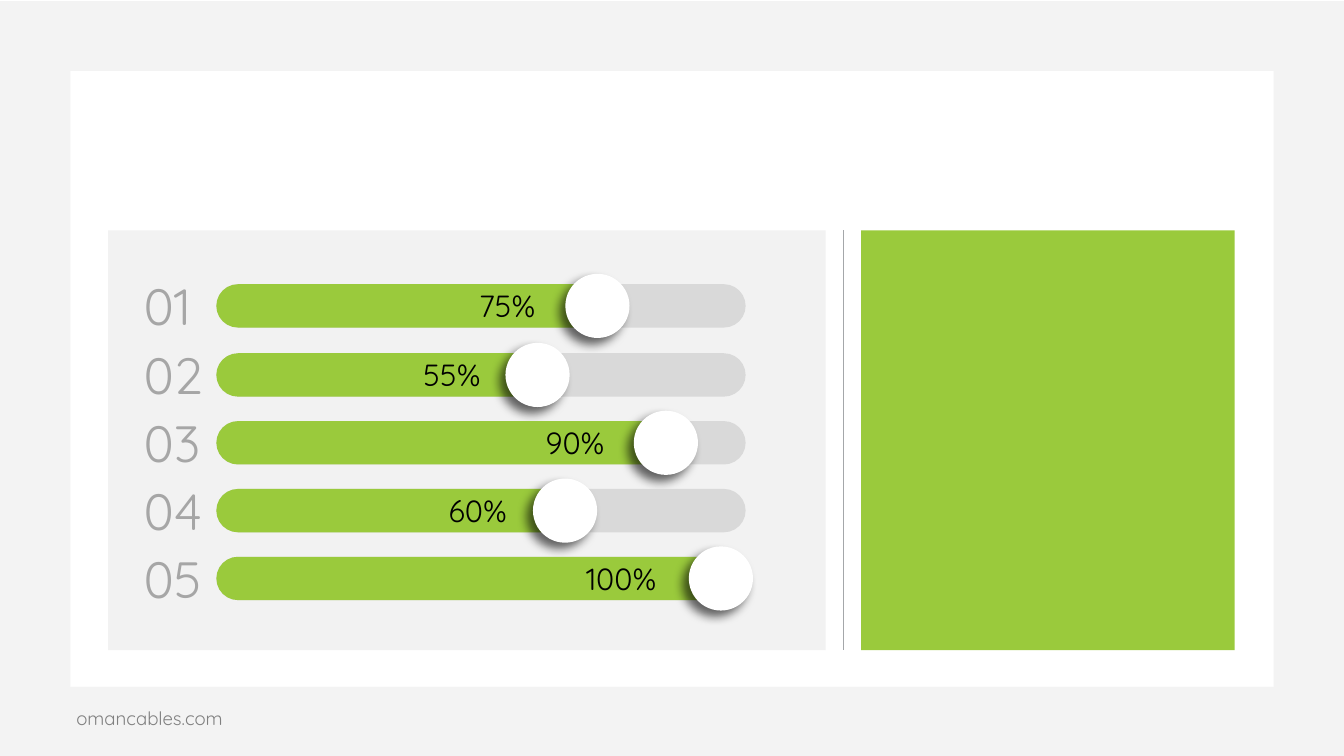
from lxml.etree import SubElement
from pptx import Presentation
from pptx.dml.color import RGBColor
from pptx.enum.shapes import MSO_CONNECTOR, MSO_SHAPE
from pptx.enum.text import MSO_AUTO_SIZE
from pptx.oxml.ns import qn
from pptx.util import Pt

WHITE = RGBColor(0xFF, 0xFF, 0xFF)
BLACK = RGBColor(0x00, 0x00, 0x00)
GREEN = RGBColor(0x9A, 0xCA, 0x3C)
PANEL_GRAY = RGBColor(0xF2, 0xF2, 0xF2)
FRAME_GRAY = RGBColor(0xEF, 0xEF, 0xEF)
TRACK_GRAY = RGBColor(0xD9, 0xD9, 0xD9)
NUMBER_GRAY = RGBColor(0xA6, 0xA6, 0xA6)
FOOTER_GRAY = RGBColor(0x80, 0x80, 0x80)
RULE_GRAY = RGBColor(0xA4, 0xA7, 0xAA)

PAGE_WIDTH, PAGE_HEIGHT = 1583.28, 890.64
PANEL_TOP, PANEL_HEIGHT = 271.44, 494.64
BAR_LEFT, TRACK_WIDTH, BAR_HEIGHT = 254.88, 623.52, 51.12
KNOB_SIZE = 75.6

# Bar top, percentage, filled width, knob left, percentage left and width
SLIDERS = [
    (334.8, 75, 458.64, 666, 557.28, 102.24),
    (416.16, 55, 393.12, 595.44, 491.76, 97.92),
    (496.08, 90, 548.64, 746.64, 635.76, 101.52),
    (576, 60, 429.12, 627.84, 521.28, 101.52),
    (655.92, 100, 596.88, 811.44, 683.28, 126.72),
]


class SlideBuilder:
    font_name = "Quicksand"

    def __init__(self, page):
        self.page = page
        self.shapes = page.shapes

    def start_group(self):
        """Send the elements that follow into a new group."""
        self.shapes = self.page.shapes.add_group_shape().shapes

    def end_group(self):
        self.shapes = self.page.shapes

    def paint(self, shape, color):
        shape.shadow.inherit = False
        shape.fill.solid()
        shape.fill.fore_color.rgb = color
        shape.line.fill.background()
        return shape

    def shape(self, kind, left, top, width, height, color):
        shape = self.shapes.add_shape(kind, Pt(left), Pt(top), Pt(width), Pt(height))
        return self.paint(shape, color)

    def bar(self, top, width, color):
        bar = self.shape(MSO_SHAPE.ROUNDED_RECTANGLE, BAR_LEFT, top, width, BAR_HEIGHT, color)
        bar.adjustments[0] = 0.5

    def knob(self, left, top):
        knob = self.shape(MSO_SHAPE.OVAL, left, top, KNOB_SIZE, KNOB_SIZE, WHITE)
        effects = knob.element.spPr.find(qn("a:effectLst"))
        shadow = SubElement(effects, qn("a:outerShdw"), blurRad=str(Pt(12)),
                            dist=str(Pt(10)), dir="8100000", algn="ctr", rotWithShape="0")
        color = SubElement(shadow, qn("a:srgbClr"), val=str(BLACK))
        SubElement(color, qn("a:alpha"), val="60000")

    def vertical_rule(self, left, top, height):
        rule = self.shapes.add_connector(
            MSO_CONNECTOR.STRAIGHT, Pt(left), Pt(top), Pt(left), Pt(top + height))
        rule.line.color.rgb = RULE_GRAY
        rule.line.width = Pt(1.1)
        SubElement(rule.element.spPr, qn("a:effectLst"))

    def frame(self, outer, inner):
        """Draw a translucent border between two (left, top, right, bottom) boxes."""
        def corners(left, top, right, bottom):
            points = [(left, top), (right, top), (right, bottom), (left, bottom)]
            return [(Pt(x), Pt(y)) for x, y in points]

        outer_points, inner_points = corners(*outer), corners(*inner)
        builder = self.shapes.build_freeform(*outer_points[0])
        builder.add_line_segments(outer_points[1:], close=True)
        builder.move_to(*inner_points[0])
        builder.add_line_segments(inner_points[:0:-1], close=True)
        frame = self.paint(builder.convert_to_shape(), FRAME_GRAY)
        color = frame.element.spPr.find(qn("a:solidFill")).find(qn("a:srgbClr"))
        SubElement(color, qn("a:alpha"), val="75000")

    def text(self, text, left, top, width, height, size, color):
        box = self.shapes.add_textbox(Pt(left), Pt(top), Pt(width), Pt(height))
        text_frame = box.text_frame
        text_frame.word_wrap = True
        text_frame.auto_size = MSO_AUTO_SIZE.SHAPE_TO_FIT_TEXT
        text_frame.text = text
        span = text_frame.paragraphs[0].runs[0]
        span.font.name = self.font_name
        span.font.size = Pt(size)
        span.font.color.rgb = color
        return text_frame


def main():
    deck = Presentation()
    deck.slide_width, deck.slide_height = Pt(PAGE_WIDTH), Pt(PAGE_HEIGHT)
    blank_layout = deck.slide_layouts[6]
    builder = SlideBuilder(deck.slides.add_slide(blank_layout))

    builder.shape(MSO_SHAPE.RECTANGLE, 127.44, PANEL_TOP, 845.28, PANEL_HEIGHT, PANEL_GRAY)
    builder.shape(MSO_SHAPE.RECTANGLE, 1014.48, PANEL_TOP, 439.92, PANEL_HEIGHT, GREEN)
    builder.vertical_rule(993.6, PANEL_TOP, PANEL_HEIGHT)
    builder.frame((0, 1.44, PAGE_WIDTH, PAGE_HEIGHT), (82.8, 83.52, 1500.48, 809.28))

    for number, slider in enumerate(SLIDERS, start=1):
        top, percent, filled_width, knob_left, percent_left, percent_width = slider
        builder.start_group()
        builder.bar(top, TRACK_WIDTH, TRACK_GRAY)
        builder.bar(top, filled_width, GREEN)
        builder.knob(knob_left, top - (KNOB_SIZE - BAR_HEIGHT) / 2)
        builder.text(f"{number:02}", 162, top - 14.4, 95.76, 79.92, 60, NUMBER_GRAY)
        builder.text(f"{percent}%", percent_left, top, percent_width, BAR_HEIGHT, 36, BLACK)
    builder.end_group()

    footer = builder.text("omancables.com", 90, 832.32, 187.2, 31.68, 22, FOOTER_GRAY)
    footer.margin_left = 0
    footer.paragraphs[0].line_spacing = 0.9

    deck.save("out.pptx")


if __name__ == "__main__":
    main()
